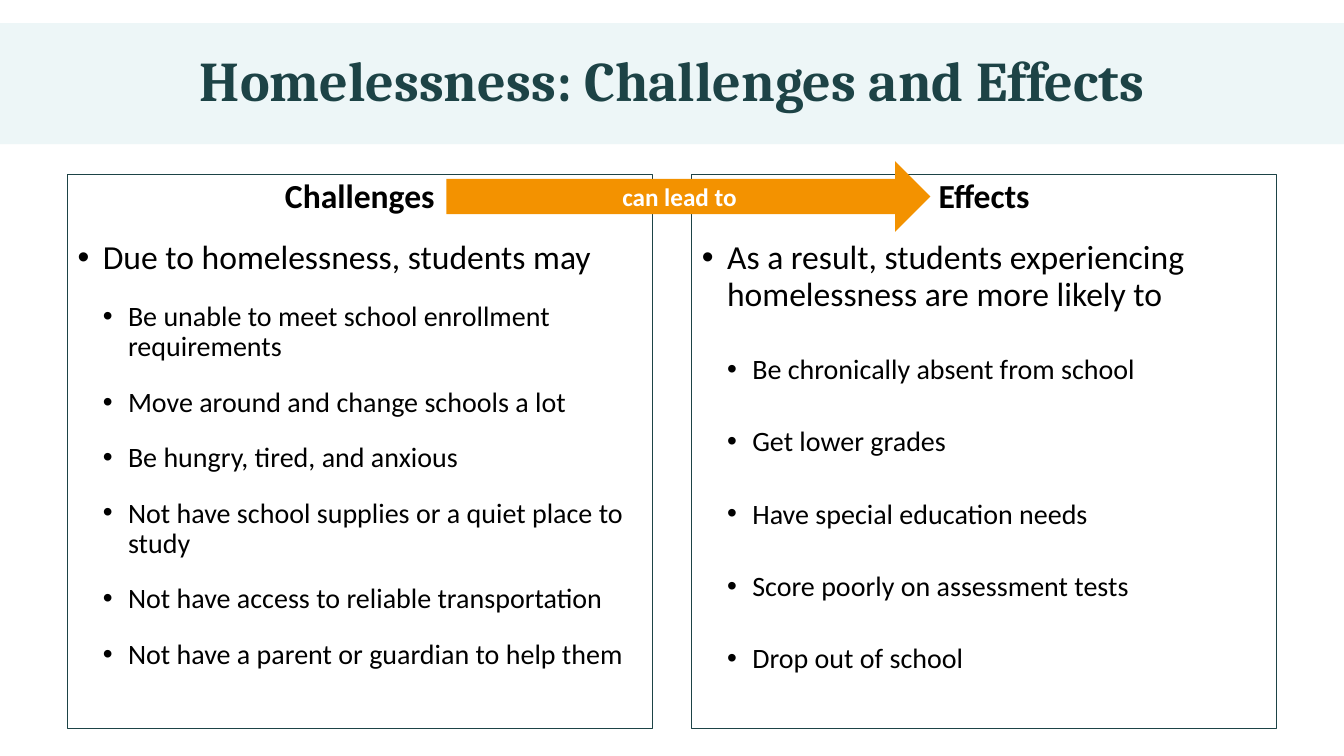
from lxml.etree import SubElement
from pptx import Presentation
from pptx.dml.color import RGBColor
from pptx.enum.shapes import MSO_SHAPE as Shape
from pptx.enum.text import MSO_ANCHOR as Anchor, MSO_AUTO_SIZE as AutoSize, PP_ALIGN as Align
from pptx.oxml.ns import qn
from pptx.util import Pt

COLORS = {
    "band": "EDF6F7",
    "teal": "1D4346",
    "text": "000000",
    "arrow": "F39200",
    "label": "FFFFFF",
}
SLIDE_WIDTH, SLIDE_HEIGHT = 960, 540
MARGIN, COLUMN_WIDTH, COLUMN_TOP, COLUMN_HEIGHT = 48.24, 417.6, 124.56, 396
INDENT = 18

CHALLENGES = [
    "Be unable to meet school enrollment requirements",
    "Move around and change schools a lot",
    "Be hungry, tired, and anxious",
    "Not have school supplies or a quiet place to study",
    "Not have access to reliable transportation",
    "Not have a parent or guardian to help them",
]
EFFECTS = [
    "Be chronically absent from school",
    "Get lower grades",
    "Have special education needs",
    "Score poorly on assessment tests",
    "Drop out of school",
]


def rgb(name):
    return RGBColor.from_string(COLORS[name])


def place(shape, box):
    shape.left, shape.top, shape.width, shape.height = map(Pt, box)


def prepare_frame(shape, anchor):
    frame = shape.text_frame
    frame.word_wrap = True
    frame.auto_size = AutoSize.NONE
    frame.vertical_anchor = anchor
    frame.margin_left = frame.margin_right = Pt(7.2)
    frame.margin_top = frame.margin_bottom = Pt(3.6)
    return frame


def set_bullet(paragraph, depth):
    properties = paragraph._p.get_or_add_pPr()
    properties.set("marL", str(Pt(INDENT * depth)))
    properties.set("indent", str(-Pt(INDENT) if depth else 0))
    if not depth:
        SubElement(properties, qn("a:buNone"))
        return
    bullet_color = SubElement(properties, qn("a:buClr"))
    SubElement(bullet_color, qn("a:srgbClr"), val=COLORS["text"])
    SubElement(properties, qn("a:buFont"), typeface="Arial")
    SubElement(properties, qn("a:buChar"), char="•")


def add_text(frame, text, size, font="Calibri", color="text", bold=False,
             align=Align.CENTER, line_spacing=0.9, before=0, depth=0):
    first = frame.paragraphs[0]
    paragraph = first if not first.runs else frame.add_paragraph()
    paragraph.alignment = align
    paragraph.line_spacing = line_spacing
    paragraph.space_before = Pt(before)
    paragraph.space_after = Pt(0)
    paragraph.level = max(depth - 1, 0)
    set_bullet(paragraph, depth)
    run = paragraph.add_run()
    run.text = text
    run.font.size = Pt(size)
    run.font.name = font
    run.font.bold = bold
    run.font.color.rgb = rgb(color)


def build_title(title, box):
    place(title, box)
    title.fill.solid()
    title.fill.fore_color.rgb = rgb("band")
    add_text(prepare_frame(title, Anchor.MIDDLE), "Homelessness: Challenges and Effects",
             size=40, font="Cambria", color="teal", bold=True)


def build_column(column, box, heading, lead, points, gap):
    place(column, box)
    column.line.color.rgb = rgb("teal")
    column.line.width = Pt(0.75)
    frame = prepare_frame(column, Anchor.TOP)
    add_text(frame, heading, size=24, bold=True)
    add_text(frame, lead, size=24, align=Align.LEFT, before=18, depth=1)
    for point in points:
        add_text(frame, point, size=20, align=Align.LEFT, before=gap, depth=2)


def build_arrow(slide, box):
    arrow = slide.shapes.add_shape(Shape.RIGHT_ARROW, *map(Pt, box))
    arrow.shadow.inherit = False
    arrow.fill.solid()
    arrow.fill.fore_color.rgb = rgb("arrow")
    arrow.line.fill.background()
    add_text(prepare_frame(arrow, Anchor.MIDDLE), "can lead to",
             size=18, color="label", bold=True, line_spacing=1)


def main():
    deck = Presentation()
    deck.slide_width, deck.slide_height = Pt(SLIDE_WIDTH), Pt(SLIDE_HEIGHT)
    slide = deck.slides.add_slide(deck.slide_layouts.get_by_name("Two Content"))
    title, challenges, effects = list(slide.placeholders)[:3]

    build_title(title, (0, 16.56, SLIDE_WIDTH, 86.4))
    build_column(challenges, (MARGIN, COLUMN_TOP, COLUMN_WIDTH, COLUMN_HEIGHT),
                 "Challenges", "Due to homelessness, students may", CHALLENGES, gap=18)
    effects_left = SLIDE_WIDTH - MARGIN - COLUMN_WIDTH
    build_column(effects, (effects_left, COLUMN_TOP, COLUMN_WIDTH, COLUMN_HEIGHT),
                 "Effects", "As a result, students experiencing homelessness are more likely to",
                 EFFECTS, gap=30)
    build_arrow(slide, (318.96, 115.2, 345.6, 50.4))
    deck.save("out.pptx")


if __name__ == "__main__":
    main()
